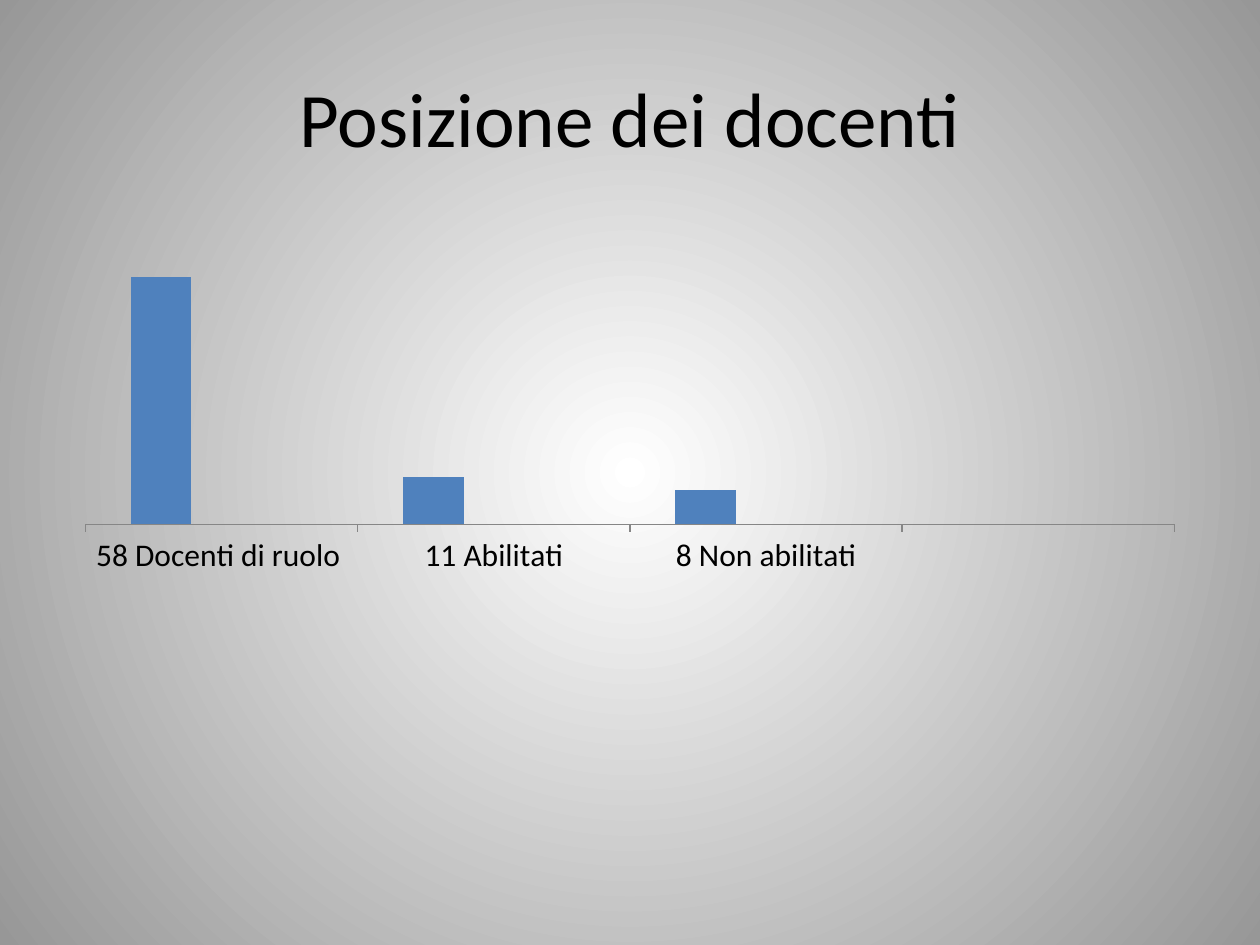
"""Builds a slide on teaching posts with a column chart."""
from lxml import etree
from pptx import Presentation
from pptx.chart.data import CategoryChartData
from pptx.dml.color import RGBColor
from pptx.enum.chart import XL_CHART_TYPE, XL_TICK_MARK
from pptx.enum.text import MSO_ANCHOR, PP_ALIGN
from pptx.oxml.ns import qn
from pptx.util import Emu, Pt

COLUMNS = XL_CHART_TYPE.COLUMN_CLUSTERED
OUT, NONE = XL_TICK_MARK.OUTSIDE, XL_TICK_MARK.NONE
MIDDLE, CENTER = MSO_ANCHOR.MIDDLE, PP_ALIGN.CENTER
BLACK = RGBColor(0x00, 0x00, 0x00)
WHITE = RGBColor(0xFF, 0xFF, 0xFF)
GRAY = RGBColor(0x97, 0x97, 0x97)
RULE = RGBColor(0x86, 0x86, 0x86)
BLUE = RGBColor(0x4F, 0x81, 0xBD)
RED = RGBColor(0xC0, 0x50, 0x4D)
GREEN = RGBColor(0x9B, 0xBB, 0x59)


def px(count):
    return Emu(round(count * 914400 / 126))


class Deck:
    face = "Calibri"

    def __init__(self, width, height):
        self.file = Presentation()
        self.file.slide_width, self.file.slide_height = px(width), px(height)
        self.slide = self.file.slides.add_slide(self.file.slide_layouts[5])

    def style(self, font, size):
        font.name, font.size = self.face, Pt(size)
        font.color.rgb = BLACK

    def glow(self, inner, outer):
        fill = self.slide.background.fill
        fill.gradient()
        for stop, color in zip(fill.gradient_stops, (inner, outer)):
            stop.color.rgb = color
        grad = next(self.slide.element.iter(qn("a:gradFill")))
        line = grad.find(qn("a:lin"))
        ring = etree.Element(qn("a:path"), {"path": "circle"})
        sides = dict.fromkeys("ltrb", "50000")
        etree.SubElement(ring, qn("a:fillToRect"), sides)
        grad.replace(line, ring)

    def title(self, text, left, top, width, height):
        shape = self.slide.shapes.title
        shape.left, shape.top = px(left), px(top)
        shape.width, shape.height = px(width), px(height)
        frame = shape.text_frame
        frame.text = text
        frame.vertical_anchor = MIDDLE
        para = frame.paragraphs[0]
        para.alignment = CENTER
        self.style(para.runs[0].font, 44)

    def chart(self, names, rows, colors, left, top, width, height):
        data = CategoryChartData()
        data.categories = names
        for number, row in enumerate(rows, 1):
            data.add_series(f"Series {number}", row)
        chart = self.slide.shapes.add_chart(
            COLUMNS, px(left), px(top), px(width), px(height), data).chart
        chart.has_legend = chart.has_title = False
        self.style(chart.font, 18)
        base, scale = chart.category_axis, chart.value_axis
        base.major_tick_mark, base.minor_tick_mark = OUT, NONE
        base.format.line.color.rgb = RULE
        scale.has_major_gridlines = scale.visible = False
        scale.minimum_scale, scale.maximum_scale = 0, 120
        plot = chart.plots[0]
        plot.gap_width, plot.overlap = 150, 0
        plot.vary_by_categories = False
        for series, color in zip(plot.series, colors):
            series.format.fill.solid()
            series.format.fill.fore_color.rgb = color


def main():
    deck = Deck(1260, 945)
    deck.glow(WHITE, GRAY)
    deck.title("Posizione dei docenti", 63, 38, 1134, 157)
    names = ["58 Docenti di ruolo ", "11 Abilitati", "8 Non abilitati", ""]
    blank = [None] * len(names)
    rows = [[100, 19, 14, None], blank, blank]
    deck.chart(names, rows, [BLUE, RED, GREEN], 63, 220, 1134, 362)
    deck.file.save("out.pptx")


if __name__ == "__main__":
    main()
